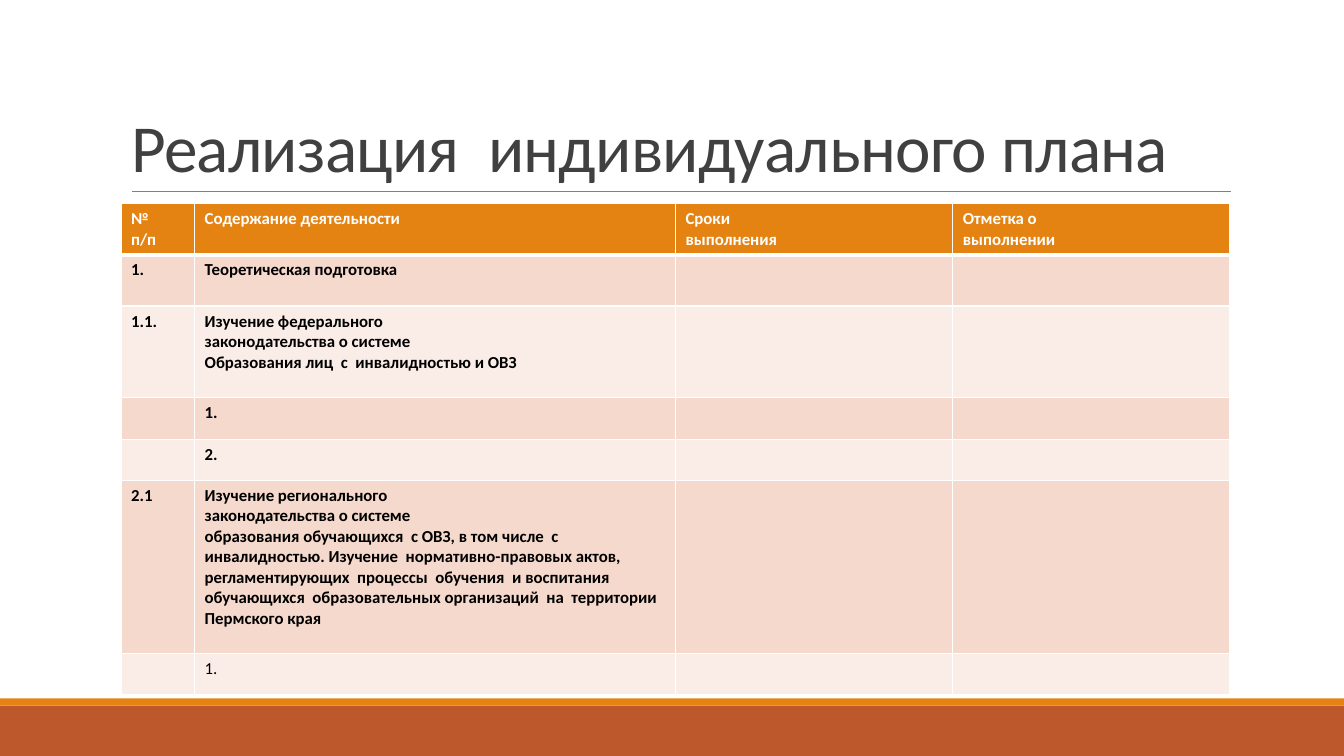
"""Build the slide with the table of the individual plan."""
from lxml.etree import SubElement
from pptx import Presentation
from pptx.dml.color import RGBColor
from pptx.enum.shapes import MSO_CONNECTOR, MSO_SHAPE
from pptx.enum.text import MSO_ANCHOR, MSO_AUTO_SIZE, PP_ALIGN
from pptx.oxml.ns import qn
from pptx.util import Inches, Pt

COLORS = {
    "title": "404040", "rule": "808080", "orange": "E48312", "rust": "BD582C",
    "white": "FFFFFF", "black": "000000", "odd": "F5D9CC", "even": "FAEDE7",
}
TITLE = "Реализация  индивидуального плана"
ROWS = [
    ("№\nп/п", "Содержание деятельности", "Сроки\nвыполнения", "Отметка о\nвыполнении"),
    ("1.", "Теоретическая подготовка", "", ""),
    ("1.1.", "Изучение федерального\nзаконодательства о системе\n"
     "Образования лиц  с  инвалидностью и ОВЗ", "", ""),
    ("", "1.", "", ""),
    ("", "2.", "", ""),
    ("2.1", "Изучение регионального\nзаконодательства о системе\n"
     "образования обучающихся  с ОВЗ, в том числе  с  инвалидностью. "
     "Изучение  нормативно-правовых актов,  регламентирующих  процессы  обучения  "
     "и воспитания  обучающихся  образовательных организаций  на  территории  "
     "Пермского края", "", ""),
    ("", "1.", "", ""),
]
COL_WIDTHS = [0.73, 4.77, 2.75, 2.75]
ROW_HEIGHTS = [0.5, 0.51, 0.91, 0.41, 0.41, 1.72, 0.41]
BANDS = [(7, 0.5, "rust"), (6.93, 0.07, "orange")]
SLIDE_W, SLIDE_H = 13.33, 7.5
LEFT, WIDTH = 1.2, 11


def rgb(name):
    return RGBColor.from_string(COLORS[name])


def set_font(r, color, **values):
    for name, value in values.items():
        setattr(r.font, name, value)
    r.font.name = "Calibri"
    r.font.color.rgb = rgb(color)


def set_borders(cell, widths):
    tcPr = cell._tc.get_or_add_tcPr()
    for side, width in widths.items():
        ln = SubElement(tcPr, qn(f"a:ln{side}"), w=str(Pt(width)))
        fill = SubElement(ln, qn("a:solidFill"))
        SubElement(fill, qn("a:srgbClr"), val=COLORS["white"])


def add_bands(s):
    for top, height, color in BANDS:
        sp = s.shapes.add_shape(MSO_SHAPE.RECTANGLE, 0, Inches(top),
                                Inches(SLIDE_W), Inches(height))
        sp.shadow.inherit = False
        sp.fill.solid()
        sp.fill.fore_color.rgb = rgb(color)
        sp.line.fill.background()


def add_rule(s):
    line = s.shapes.add_connector(MSO_CONNECTOR.STRAIGHT, Inches(1.31), Inches(1.9),
                                  Inches(12.21), Inches(1.9))
    line.line.color.rgb = rgb("rule")
    line.line.width = Pt(0.5)
    SubElement(line._element.spPr, qn("a:effectLst"))


def add_title(s):
    sp = s.shapes.title
    box = {"left": LEFT, "top": 0.31, "width": WIDTH, "height": 1.59}
    for name, value in box.items():
        setattr(sp, name, Inches(value))
    tf = sp.text_frame
    tf.word_wrap = True
    tf.auto_size = MSO_AUTO_SIZE.NONE
    tf.vertical_anchor = MSO_ANCHOR.BOTTOM
    p = tf.paragraphs[0]
    p.alignment = PP_ALIGN.LEFT
    p.line_spacing = 0.85
    r = p.add_run()
    r.text = TITLE
    set_font(r, "title", size=Pt(48))
    r._r.get_or_add_rPr().set("spc", "-50")


def add_plan(s):
    table = s.shapes.add_table(len(ROWS), len(COL_WIDTHS), Inches(LEFT), Inches(2.02),
                               Inches(WIDTH), Inches(sum(ROW_HEIGHTS))).table
    for col, width in zip(table.columns, COL_WIDTHS):
        col.width = Inches(width)
    for row, height in zip(table.rows, ROW_HEIGHTS):
        row.height = Inches(height)
    last = len(ROWS) - 1
    for i, texts in enumerate(ROWS):
        band = "orange" if i == 0 else ("odd" if i % 2 else "even")
        color = "black" if i else "white"
        for j, text in enumerate(texts):
            cell = table.cell(i, j)
            set_borders(cell, {"L": 1, "R": 1, "T": 3 if i == 1 else 1,
                               "B": 3 if i == 0 else 1})
            cell.fill.solid()
            cell.fill.fore_color.rgb = rgb(band)
            if text:
                cell.text_frame.text = text
            for p in cell.text_frame.paragraphs:
                for r in p.runs:
                    set_font(r, color, size=Pt(12), bold=i < last)


def main():
    prs = Presentation()
    prs.slide_width, prs.slide_height = Inches(SLIDE_W), Inches(SLIDE_H)
    s = prs.slides.add_slide(prs.slide_layouts[5])
    add_bands(s)
    add_rule(s)
    add_title(s)
    add_plan(s)
    prs.save("out.pptx")


if __name__ == "__main__":
    main()
